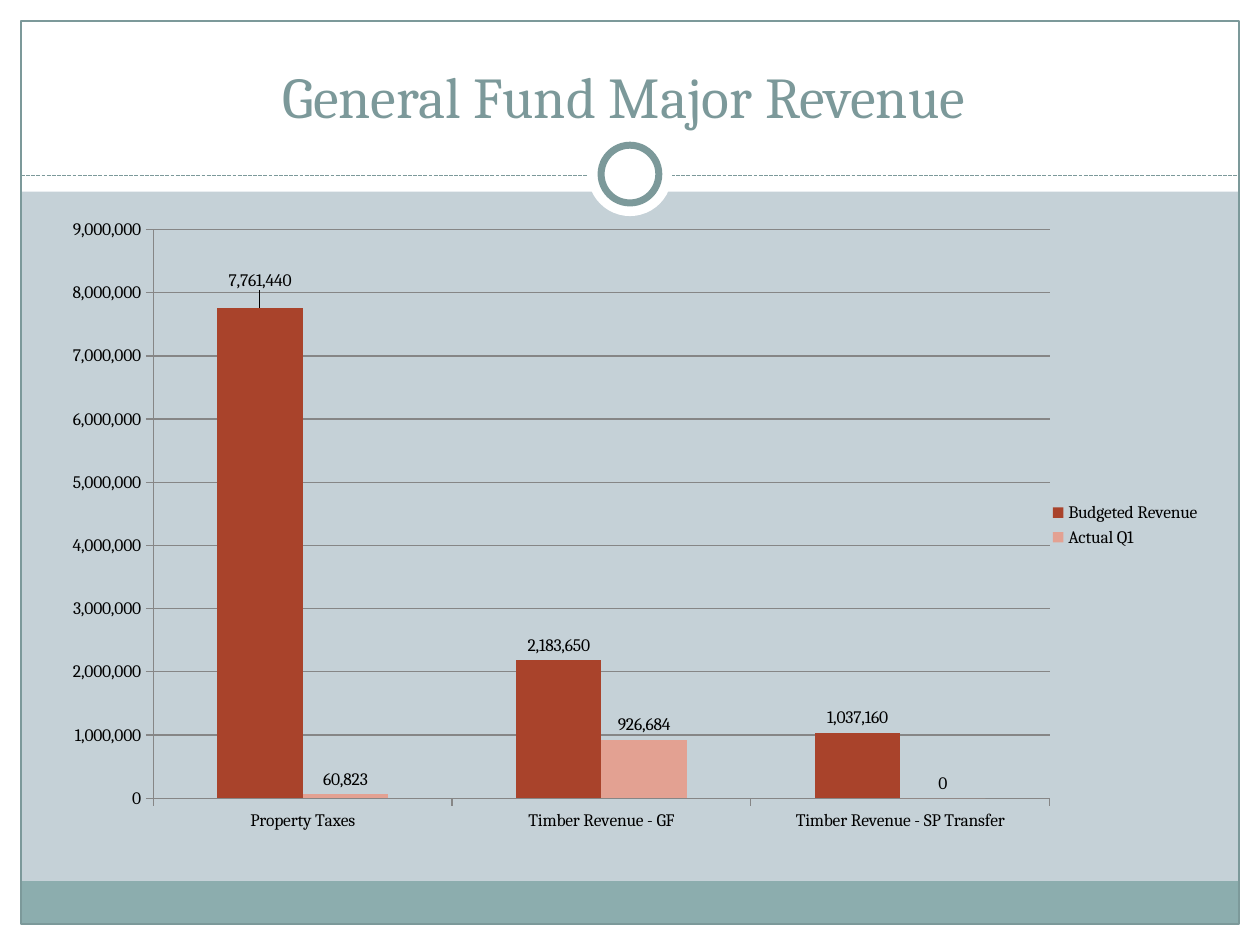
from lxml import etree
from pptx import Presentation
from pptx.chart.data import CategoryChartData
from pptx.dml.color import RGBColor
from pptx.enum.chart import XL_CHART_TYPE, XL_LABEL_POSITION, XL_LEGEND_POSITION, XL_TICK_MARK
from pptx.enum.dml import MSO_LINE
from pptx.enum.shapes import MSO_CONNECTOR, MSO_SHAPE
from pptx.enum.text import MSO_ANCHOR, PP_ALIGN
from pptx.oxml import parse_xml
from pptx.oxml.ns import nsdecls, qn
from pptx.util import Pt

RECT, OVAL = MSO_SHAPE.RECTANGLE, MSO_SHAPE.OVAL
STRAIGHT = MSO_CONNECTOR.STRAIGHT
DASH = MSO_LINE.SQUARE_DOT
COLUMNS = XL_CHART_TYPE.COLUMN_CLUSTERED
OUTSIDE_END = XL_LABEL_POSITION.OUTSIDE_END
LEGEND_RIGHT = XL_LEGEND_POSITION.RIGHT
TICK_OUT, TICK_NONE = XL_TICK_MARK.OUTSIDE, XL_TICK_MARK.NONE
BOTTOM, CENTER = MSO_ANCHOR.BOTTOM, PP_ALIGN.CENTER

FONT = "Cambria"
NUMBER = "#,##0"
COLORS = {
    "background": "C5D1D7",
    "paper": "FFFFFF",
    "band": "8CADAE",
    "accent": "7C999A",
    "text": "000000",
    "grid": "868686",
    "budgeted": "A9432B",
    "actual": "E3A192",
}
SLIDE_W, SLIDE_H = 720, 540
MARGIN = 12
HEADER_H = 109.5

CATEGORIES = ["Property Taxes", "Timber Revenue - GF", "Timber Revenue - SP Transfer"]
REVENUE = [
    ("Budgeted Revenue", "budgeted", (7761440, 2183650, 1037160)),
    ("Actual Q1", "actual", (60823, 926684, 0)),
]


def rgb(name):
    return RGBColor.from_string(COLORS[name])


def style_font(font, size, color):
    font.name = FONT
    font.size = Pt(size)
    font.bold = False
    font.color.rgb = rgb(color)


def add_shape(slide, kind, box, fill=None, line=None, width=0.75):
    shape = slide.shapes.add_shape(kind, *map(Pt, box))
    shape.shadow.inherit = False
    if fill:
        shape.fill.solid()
        shape.fill.fore_color.rgb = rgb(fill)
    else:
        shape.fill.background()
    if line:
        shape.line.color.rgb = rgb(line)
        shape.line.width = Pt(width)
    else:
        shape.line.fill.background()


def add_frame(slide, box):
    """White margins and header around the page, with the footer band and outline."""
    left, top, width, height = box
    right, bottom = left + width, top + height
    inner_w, inner_h = width - 2 * MARGIN, height - 2 * MARGIN
    band_h = 24.5
    for margin in (
        (left, bottom - MARGIN, width, MARGIN),
        (left, top, width, HEADER_H),
        (left, top, MARGIN, height),
        (right - MARGIN, top, MARGIN, height),
    ):
        add_shape(slide, RECT, margin, "paper")
    add_shape(slide, RECT, (left + MARGIN, bottom - MARGIN - band_h, inner_w, band_h), "band")
    add_shape(slide, RECT, (left + MARGIN, top + MARGIN, inner_w, inner_h), line="accent")


def add_divider(slide, box):
    """Dashed line through the box's top edge, with a ring centred on the box."""
    left, top, width, height = box
    dashes = slide.shapes.add_connector(STRAIGHT, Pt(left), Pt(top), Pt(left + width), Pt(top))
    dashes.line.color.rgb = rgb("accent")
    dashes.line.width = Pt(0.75)
    dashes.line.dash_style = DASH
    etree.SubElement(dashes._element.spPr, qn("a:effectLst"))

    center_x, center_y = left + width / 2, top + height / 2
    for size, line in ((48, None), (33, "accent")):
        ring = (center_x - size / 2, center_y - size / 2, size, size)
        add_shape(slide, OVAL, ring, "paper", line, 4)


def add_title(slide, box, wording):
    frame = slide.shapes.add_textbox(*map(Pt, box)).text_frame
    frame.word_wrap = True
    frame.vertical_anchor = BOTTOM
    frame.text = wording
    paragraph = frame.paragraphs[0]
    paragraph.alignment = CENTER
    style_font(paragraph.runs[0].font, 33, "accent")


def manual_layout(x, y, size=None):
    """Layout element in fractions of the chart; with a size it places the inner plot."""
    settings = {"x": x, "y": y}
    if size:
        settings = {"layoutTarget": "inner", "xMode": "edge", "yMode": "edge",
                    **settings, "w": size[0], "h": size[1]}
    parts = "".join(f'<c:{tag} val="{value}"/>' for tag, value in settings.items())
    return parse_xml(f'<c:layout {nsdecls("c")}><c:manualLayout>{parts}</c:manualLayout></c:layout>')


def style_axes(chart):
    value_axis, category_axis = chart.value_axis, chart.category_axis
    value_axis.minimum_scale, value_axis.maximum_scale = 0, 9000000
    value_axis.major_unit = 1000000
    value_axis.has_major_gridlines = True
    value_axis.tick_labels.number_format = NUMBER
    value_axis.tick_labels.number_format_is_linked = False
    for axis in (value_axis, category_axis):
        axis.major_tick_mark = TICK_OUT
        axis.minor_tick_mark = TICK_NONE
    for rule in (value_axis, category_axis, value_axis.major_gridlines):
        rule.format.line.color.rgb = rgb("grid")
        rule.format.line.width = Pt(0.75)


def add_revenue_chart(slide, box):
    data = CategoryChartData(number_format=NUMBER)
    data.categories = CATEGORIES
    for name, _, amounts in REVENUE:
        data.add_series(name, amounts)
    chart = slide.shapes.add_chart(COLUMNS, *map(Pt, box), data).chart
    chart.has_title = False
    style_font(chart.font, 10, "text")
    chart.has_legend = True
    chart.legend.position = LEGEND_RIGHT
    chart.legend.include_in_layout = False
    style_axes(chart)

    plot = chart.plots[0]
    plot.vary_by_categories = False
    plot.gap_width = 150
    plot.overlap = 0
    for series, (_, color, _) in zip(plot.series, REVENUE):
        series.format.fill.solid()
        series.format.fill.fore_color.rgb = rgb(color)
        labels = series.data_labels
        labels.show_value = True
        labels.number_format = NUMBER
        labels.number_format_is_linked = False
        labels.position = OUTSIDE_END

    plot.series[0].points[0].data_label.position = OUTSIDE_END
    raised_label = plot.series[0].data_labels._element.find(qn("c:dLbl"))
    raised_label.find(qn("c:idx")).addnext(manual_layout(0.0, -0.02))

    plot_area = chart._chartSpace.chart.plotArea
    for layout in plot_area.findall(qn("c:layout")):
        plot_area.remove(layout)
    plot_area.insert(0, manual_layout(0.095, 0.031, (0.765, 0.903)))


def main():
    prs = Presentation()
    prs.slide_width, prs.slide_height = Pt(SLIDE_W), Pt(SLIDE_H)
    slide = prs.slides.add_slide(prs.slide_layouts[6])
    slide.background.fill.solid()
    slide.background.fill.fore_color.rgb = rgb("background")

    add_frame(slide, (0, 0, SLIDE_W, SLIDE_H))
    add_divider(slide, (MARGIN, 100.5, SLIDE_W - 2 * MARGIN, -2))
    add_title(slide, (24, 18, 672, 60), "General Fund Major Revenue ")
    add_revenue_chart(slide, (24, 120, 669.5, 360))
    prs.save("out.pptx")


if __name__ == "__main__":
    main()
